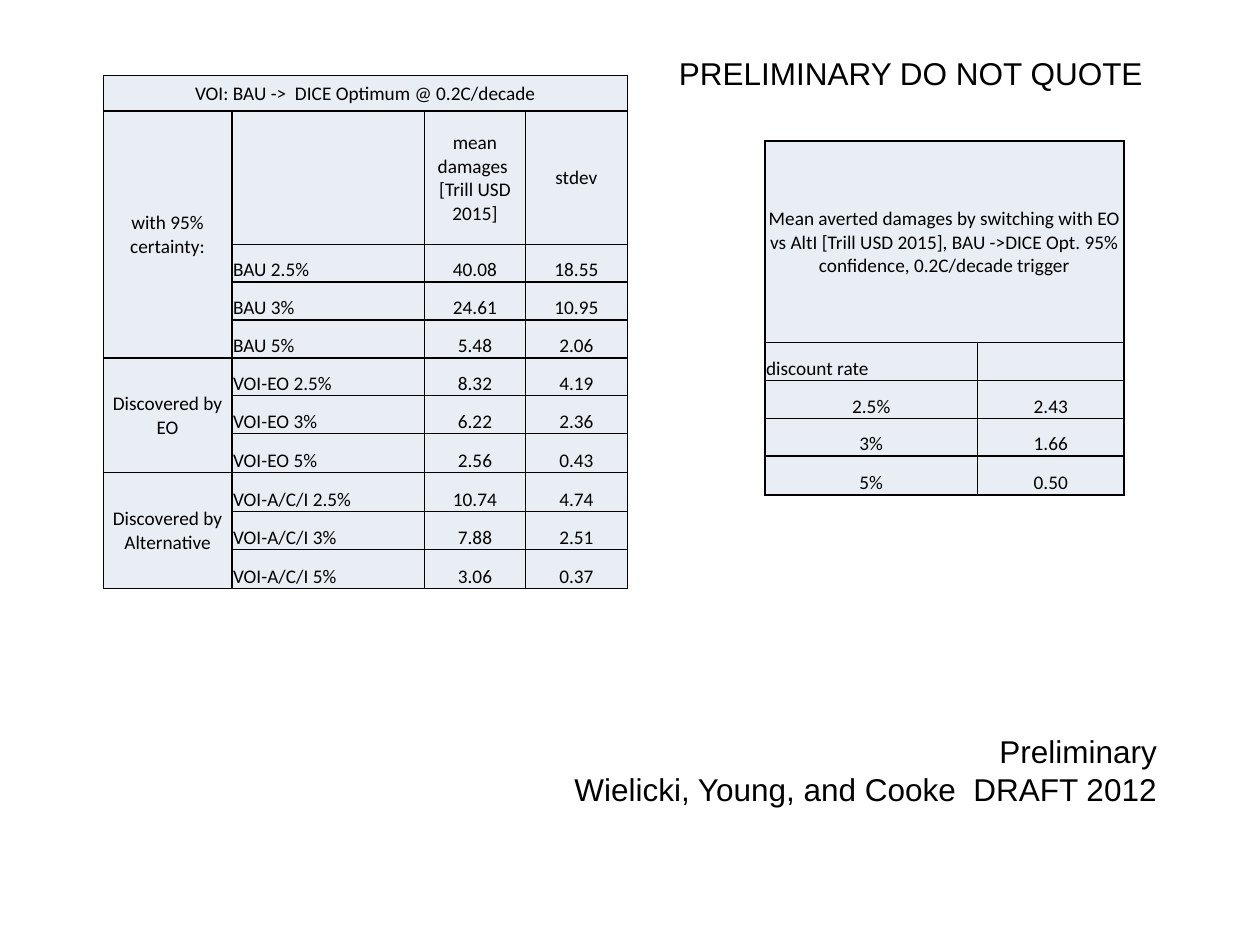
from lxml.etree import SubElement
from pptx import Presentation
from pptx.dml.color import RGBColor
from pptx.enum.text import MSO_ANCHOR, PP_ALIGN
from pptx.oxml.ns import qn
from pptx.util import Inches, Pt

COLORS = {"ink": "000000", "cell": "E9EDF4"}
ALIGN = {"l": PP_ALIGN.LEFT, "c": PP_ALIGN.CENTER, "r": PP_ALIGN.RIGHT}

# Content: merges are (row, column, last row, last column)
ROW = 0.3
TABLES = [
    {
        "at": (0.82, 0.6),
        "cols": [1.02, 1.53, 0.8, 0.81],
        "rows": [0.28, 1.06] + [ROW] * 5 + [0.31, 0.31, ROW, 0.31],
        "merges": [(0, 0, 0, 3), (1, 0, 4, 0), (5, 0, 7, 0), (8, 0, 10, 0)],
        "middle_rows": 2,
        "label_col": 1,
        "cells": [
            ["VOI: BAU ->  DICE Optimum @ 0.2C/decade", "", "", ""],
            ["with 95% certainty:", "", "mean damages  [Trill USD 2015]", "stdev"],
            ["", "BAU 2.5%", "40.08", "18.55"],
            ["", "BAU 3%", "24.61", "10.95"],
            ["", "BAU 5%", "5.48", "2.06"],
            ["Discovered by EO", "VOI-EO 2.5%", "8.32", "4.19"],
            ["", "VOI-EO 3%", "6.22", "2.36"],
            ["", "VOI-EO 5%", "2.56", "0.43"],
            ["Discovered by Alternative", "VOI-A/C/I 2.5%", "10.74", "4.74"],
            ["", "VOI-A/C/I 3%", "7.88", "2.51"],
            ["", "VOI-A/C/I 5%", "3.06", "0.37"],
        ],
    },
    {
        "at": (6.07, 1.12),
        "cols": [1.69, 1.16],
        "rows": [1.6] + [ROW] * 3 + [0.31],
        "merges": [(0, 0, 0, 1)],
        "middle_rows": 1,
        "label_col": None,
        "cells": [
            ["Mean averted damages by switching with EO vs AltI [Trill USD 2015], "
             "BAU ->DICE Opt. 95% confidence, 0.2C/decade trigger", ""],
            ["discount rate", ""],
            ["2.5%", "2.43"],
            ["3%", "1.66"],
            ["5%", "0.50"],
        ],
    },
]
NOTES = [
    ((4.38, 5.76, 4.9, 0.71),
     ["Preliminary", "Wielicki, Young, and Cooke  DRAFT 2012"], "r"),
    ((5.29, 0.38, 4.15, 0.4), ["PRELIMINARY DO NOT QUOTE"], "l"),
]


def write(tf, lines, size=18, font="Arial", align="l", color="ink"):
    tf.word_wrap = True
    for i, line in enumerate(lines):
        p = tf.paragraphs[0] if i == 0 else tf.add_paragraph()
        p.alignment = ALIGN[align]
        if not line:
            # An empty cell keeps the text size, so its row does not grow
            SubElement(p._p, qn("a:endParaRPr"), sz=str(size * 100))
            continue
        r = p.add_run()
        r.text = line
        r.font.size, r.font.name = Pt(size), font
        r.font.color.rgb = RGBColor.from_string(COLORS[color])


def add_borders(cell, width=1, color="ink"):
    tcPr = cell._tc.get_or_add_tcPr()
    for i, side in enumerate(("lnL", "lnR", "lnT", "lnB")):
        ln = tcPr.makeelement(qn(f"a:{side}"), {"w": str(Pt(width))})
        fill = SubElement(ln, qn("a:solidFill"))
        SubElement(fill, qn("a:srgbClr"), val=COLORS[color])
        tcPr.insert(i, ln)


def add_grid(slide, t):
    cols, rows = t["cols"], t["rows"]
    box = [Inches(v) for v in (*t["at"], sum(cols), sum(rows))]
    table = slide.shapes.add_table(len(rows), len(cols), *box).table
    table.first_row = table.horz_banding = False
    for col, width in zip(table.columns, cols):
        col.width = Inches(width)
    for row, height in zip(table.rows, rows):
        row.height = Inches(height)

    group_heads = {(r, c) for r, c, _, _ in t["merges"]}
    for i, texts in enumerate(t["cells"]):
        for j, text in enumerate(texts):
            cell = table.cell(i, j)
            middle = i < t["middle_rows"] or (i, j) in group_heads
            label = j == t["label_col"] or text == "discount rate"
            cell.vertical_anchor = MSO_ANCHOR.MIDDLE if middle else MSO_ANCHOR.BOTTOM
            cell.margin_left = cell.margin_right = cell.margin_top = Inches(0.01)
            cell.margin_bottom = 0
            cell.fill.solid()
            cell.fill.fore_color.rgb = RGBColor.from_string(COLORS["cell"])
            add_borders(cell)
            write(cell.text_frame, [text], size=11, font="Calibri",
                  align="l" if label else "c")
    for r1, c1, r2, c2 in t["merges"]:
        table.cell(r1, c1).merge(table.cell(r2, c2))


def main():
    prs = Presentation()
    prs.slide_width, prs.slide_height = Inches(10), Inches(7.5)
    slide = prs.slides.add_slide(prs.slide_layouts[6])

    # Damage tables
    for t in TABLES:
        add_grid(slide, t)

    # Draft notices
    for box, lines, align in NOTES:
        sp = slide.shapes.add_textbox(*[Inches(v) for v in box])
        write(sp.text_frame, lines, align=align)

    prs.save("out.pptx")


if __name__ == "__main__":
    main()
